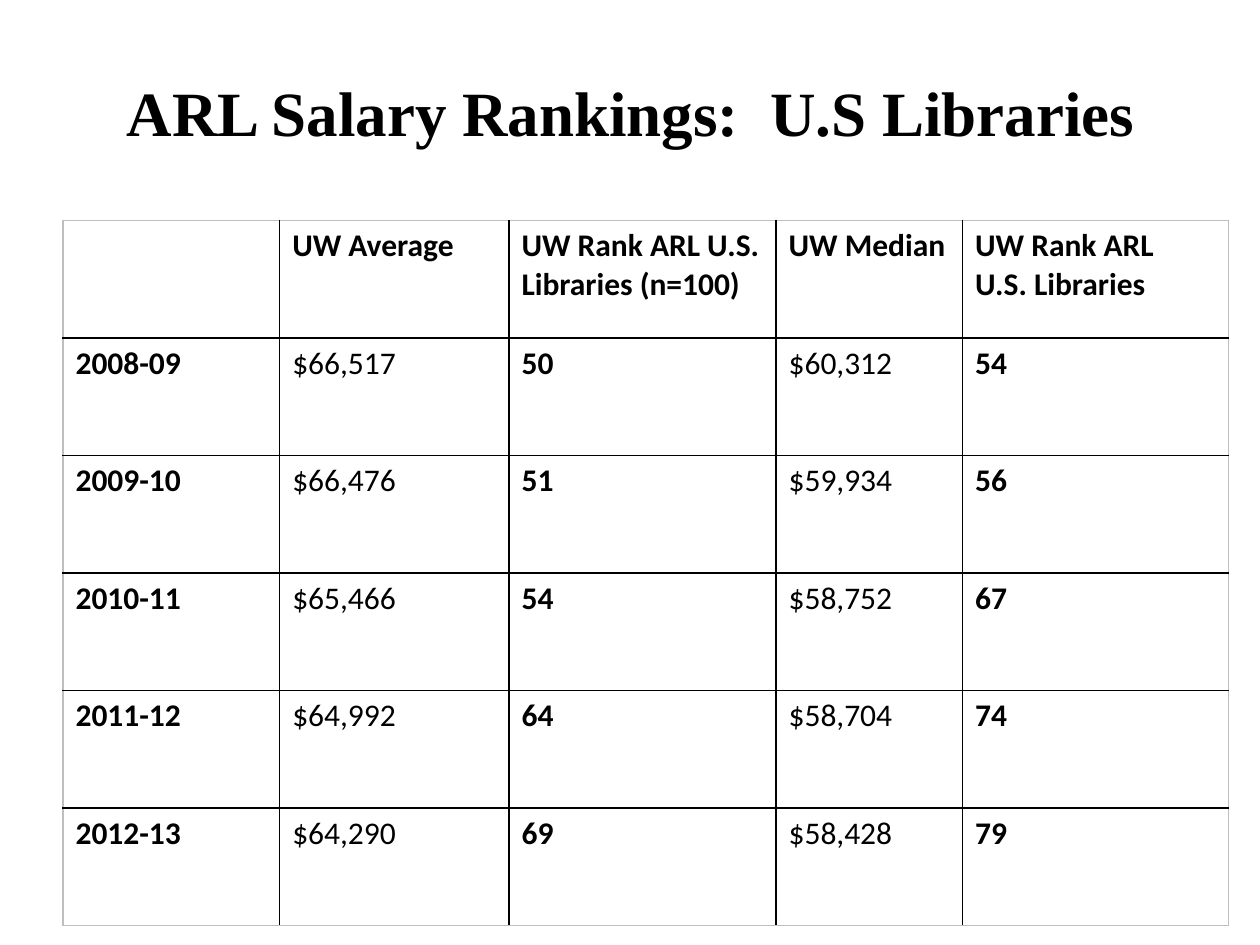
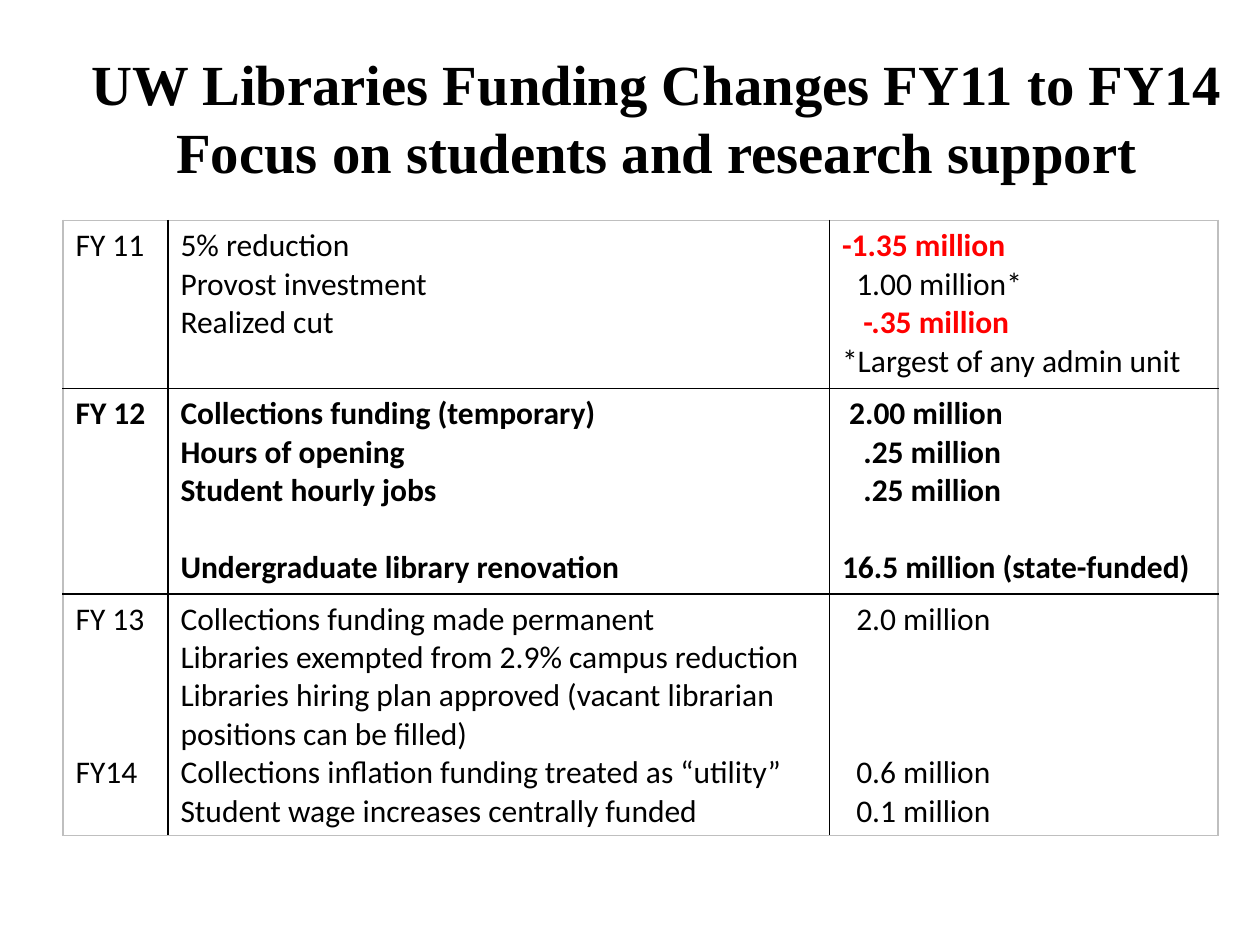
from dataclasses import dataclass

from lxml import etree
from pptx import Presentation
from pptx.dml.color import RGBColor
from pptx.enum.text import MSO_ANCHOR, PP_ALIGN
from pptx.oxml.ns import qn
from pptx.util import Emu, Inches, Pt

CENTER = PP_ALIGN.CENTER
MIDDLE = MSO_ANCHOR.MIDDLE
COLORS = {"text": "000000", "cut": "FF0000", "inner": "000000", "outer": "BFBFBF"}
TITLE_FONT, BODY_FONT = "Times New Roman", "Calibri"
BODY_SIZE = 18
LINE_PITCH = 21.97  # points between two body lines
INDENT_STEP = 4.07  # points for one indent step
GRID_COLUMNS, GRID_ROWS = 100, 75


@dataclass
class Line:
    """One paragraph of a table cell."""
    text: str
    indent: int = 0
    skipped_lines: int = 0
    bold: bool = False
    color: str = "text"


class Deck:
    """Holds the shared style and the slide being built."""

    def __init__(self):
        self.presentation = Presentation()
        self.presentation.slide_width = Inches(10)
        self.presentation.slide_height = Inches(7.5)
        self.slide = None

    def x(self, columns):
        return Emu(round(self.presentation.slide_width * columns / GRID_COLUMNS))

    def y(self, rows):
        return Emu(round(self.presentation.slide_height * rows / GRID_ROWS))

    def add_slide(self):
        self.slide = self.presentation.slides.add_slide(self.presentation.slide_layouts[6])

    def add_run(self, paragraph, text, font, size, bold, color="text"):
        run = paragraph.add_run()
        run.text = text
        run.font.name = font
        run.font.size = Pt(size)
        run.font.bold = bold
        run.font.color.rgb = RGBColor.from_string(COLORS[color])

    def add_title(self, lines, left, top, width, height, size):
        box = self.slide.shapes.add_textbox(
            self.x(left), self.y(top), self.x(width), self.y(height))
        frame = box.text_frame
        frame.word_wrap = True
        frame.vertical_anchor = MIDDLE
        paragraph = frame.paragraphs[0]
        paragraph.alignment = CENTER
        for index, line in enumerate(lines):
            if index:
                paragraph.add_line_break()
            self.add_run(paragraph, line, TITLE_FONT, size, True)

    def add_table(self, cells, column_widths, row_heights, left=5, top=17.5):
        row_count, column_count = len(row_heights), len(column_widths)
        table = self.slide.shapes.add_table(
            row_count, column_count, self.x(left), self.y(top),
            self.x(sum(column_widths)), self.y(sum(row_heights))).table
        table.first_row = table.horz_banding = False
        for column, width in zip(table.columns, column_widths):
            column.width = self.x(width)
        for row, height in zip(table.rows, row_heights):
            row.height = self.y(height)
        for r, row_cells in enumerate(cells):
            for c, lines in enumerate(row_cells):
                cell = table.cell(r, c)
                cell.fill.background()
                self.fill_cell(cell, lines)
                self.add_borders(cell, {
                    "a:lnL": c == 0, "a:lnR": c == column_count - 1,
                    "a:lnT": r == 0, "a:lnB": r == row_count - 1})

    def fill_cell(self, cell, lines):
        for index, line in enumerate(lines):
            frame = cell.text_frame
            paragraph = frame.add_paragraph() if index else frame.paragraphs[0]
            if line.indent:
                margin = Pt(line.indent * INDENT_STEP)
                paragraph._p.get_or_add_pPr().set("marL", str(margin))
            if line.skipped_lines:
                paragraph.space_before = Pt(line.skipped_lines * LINE_PITCH)
            for part, text in enumerate(line.text.split("\n")):
                if part:
                    paragraph.add_line_break()
                self.add_run(paragraph, text, BODY_FONT, BODY_SIZE, line.bold, line.color)

    def add_borders(self, cell, edges):
        properties = cell._tc.get_or_add_tcPr()
        for position, (tag, is_outer) in enumerate(edges.items()):
            border = etree.Element(qn(tag), w=str(Pt(1)))
            fill = etree.SubElement(border, qn("a:solidFill"))
            color = COLORS["outer" if is_outer else "inner"]
            etree.SubElement(fill, qn("a:srgbClr"), val=color)
            properties.insert(position, border)


def plain(*texts):
    return [Line(text) for text in texts]


def bold(*texts):
    return [Line(text, bold=True) for text in texts]


def build_salary_rankings(deck):
    deck.add_slide()
    deck.add_title(["ARL Salary Rankings:  U.S Libraries"], 1.7, 1.7, 96.7, 14.2, 36)
    header = [[], bold("UW Average"), bold("UW Rank ARL U.S.", "Libraries (n=100)"),
              bold("UW Median"), bold("UW Rank ARL\nU.S. Libraries")]
    rankings = [
        ("2008-09", "$66,517", "50", "$60,312", "54"),
        ("2009-10", "$66,476", "51", "$59,934", "56"),
        ("2010-11", "$65,466", "54", "$58,752", "67"),
        ("2011-12", "$64,992", "64", "$58,704", "74"),
        ("2012-13", "$64,290", "69", "$58,428", "79"),
    ]
    # Salaries are regular; years and ranks are bold
    styles = [bold, plain, bold, plain, bold]
    body = [[style(text) for style, text in zip(styles, row)] for row in rankings]
    deck.add_table([header] + body, [17.2, 18.2, 21.2, 14.8, 21.1], [9.33] * 6)


def build_funding_changes(deck):
    deck.add_slide()
    deck.add_title(["UW Libraries Funding Changes FY11 to FY14",
                    "Focus on students and research support"], 5, 3, 94.2, 12.5, 32.4)
    fiscal_2011 = [
        plain("FY 11"),
        plain("5% reduction", "Provost investment", "Realized cut"),
        [Line("-1.35 million", bold=True, color="cut"),
         Line("1.00 million*", indent=2),
         Line("-.35 million", indent=3, bold=True, color="cut"),
         Line("*Largest of any admin unit")],
    ]
    fiscal_2012 = [
        bold("FY 12"),
        bold("Collections funding (temporary)", "Hours of opening", "Student hourly jobs")
        + [Line("Undergraduate library renovation", skipped_lines=1, bold=True)],
        [Line("2.00 million", indent=1, bold=True),
         Line(".25 million", indent=3, bold=True),
         Line(".25 million", indent=3, bold=True),
         Line("16.5 million (state-funded)", skipped_lines=1, bold=True)],
    ]
    fiscal_2013_2014 = [
        [Line("FY 13"), Line("FY14", skipped_lines=3)],
        plain("Collections funding made permanent",
              "Libraries exempted from 2.9% campus reduction",
              "Libraries hiring plan approved (vacant librarian positions can be filled)",
              "Collections inflation funding treated as “utility”",
              "Student wage increases centrally funded"),
        [Line("2.0 million", indent=2),
         Line("0.6 million", indent=2, skipped_lines=3),
         Line("0.1 million", indent=2)],
    ]
    deck.add_table([fiscal_2011, fiscal_2012, fiscal_2013_2014],
                   [8.33, 52.5, 30.83], [13.33, 16.3, 19.2])


def main():
    deck = Deck()
    build_salary_rankings(deck)
    build_funding_changes(deck)
    deck.presentation.save("out.pptx")


if __name__ == "__main__":
    main()
